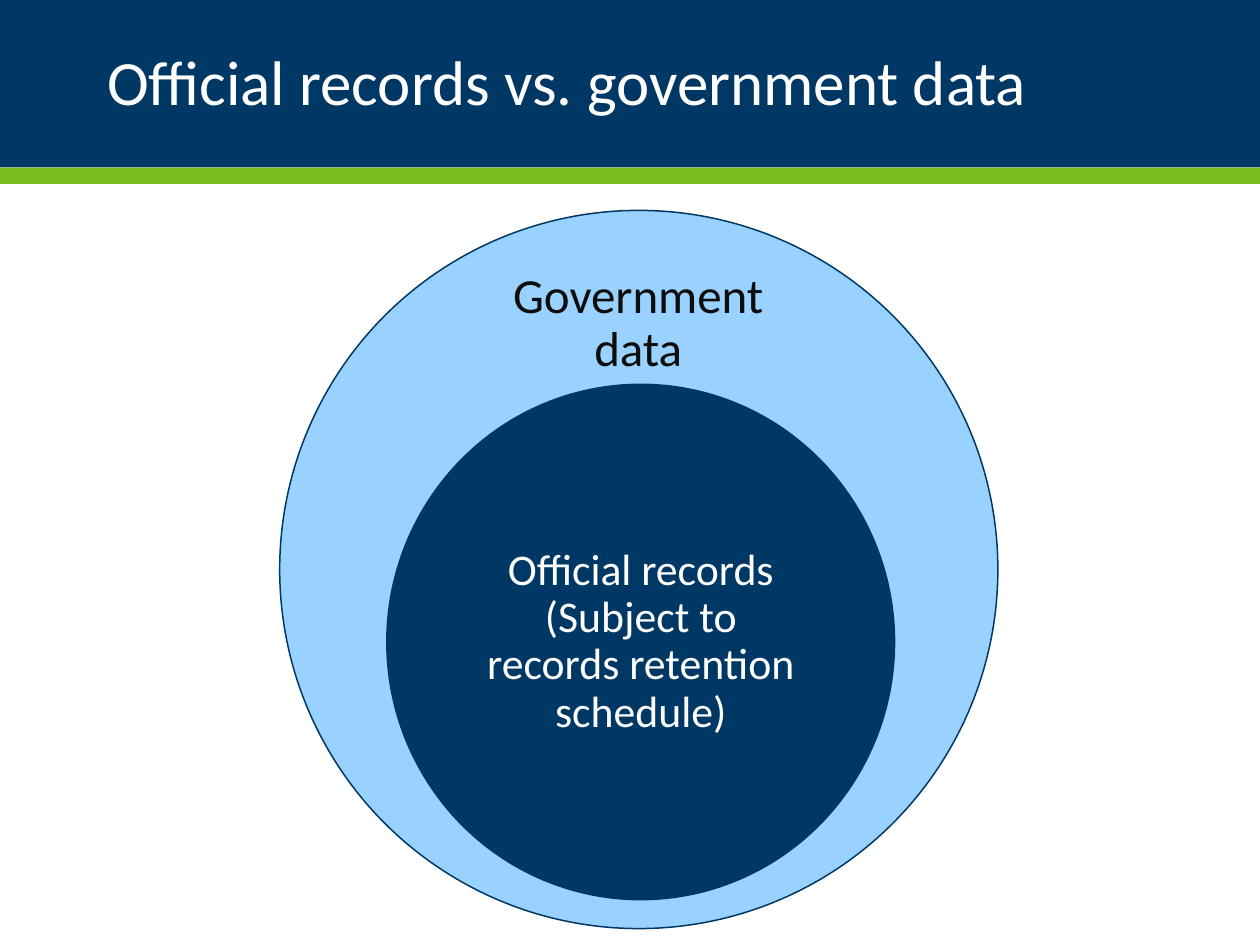
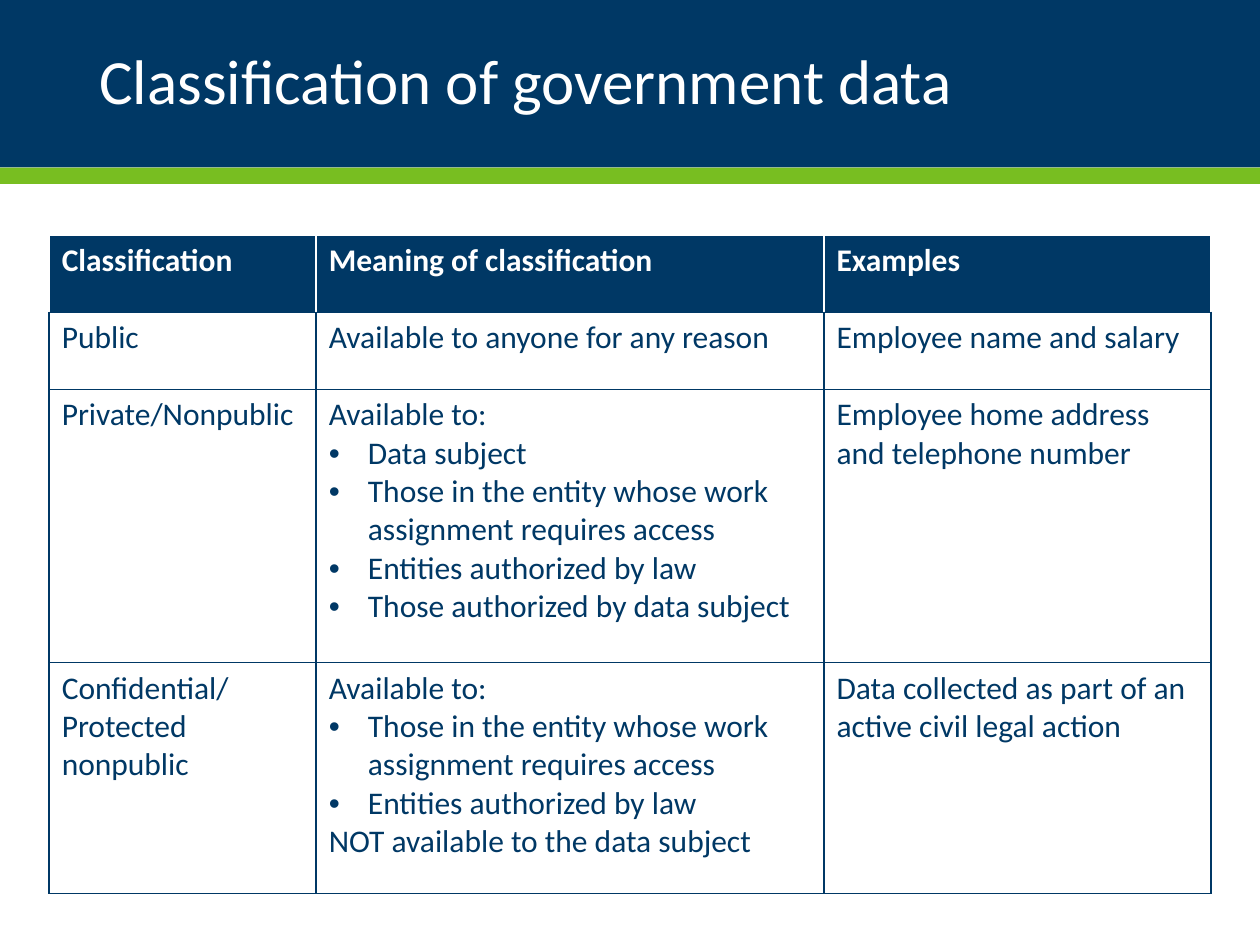
"""Build two slides on official records and the classification of government data."""
from dataclasses import dataclass
from typing import NamedTuple

from lxml.etree import SubElement
from pptx import Presentation
from pptx.dml.color import RGBColor
from pptx.enum.shapes import MSO_SHAPE
from pptx.enum.text import MSO_ANCHOR, PP_ALIGN
from pptx.oxml.ns import qn
from pptx.util import Inches, Pt

NAVY = RGBColor(0x00, 0x38, 0x65)
GREEN = RGBColor(0x78, 0xBE, 0x21)
SKY = RGBColor(0x99, 0xD1, 0xFF)
INK = RGBColor(0x0D, 0x0D, 0x0D)
WHITE = RGBColor(0xFF, 0xFF, 0xFF)
FONT = "Calibri"
SLIDE_WIDTH, SLIDE_HEIGHT = Inches(10), Inches(7.5)
GRID_COLUMNS, GRID_ROWS = 100, 75


class Region(NamedTuple):
    """Place on the slide in grid columns and rows."""
    left: float
    top: float
    width: float
    height: float


class Line(NamedTuple):
    """Paragraph of a table cell."""
    text: str
    bulleted: bool = False


@dataclass(frozen=True)
class Label:
    """Text with its place, size, colour and layout."""
    text: str
    region: Region
    size: float
    color: RGBColor
    inset: float = 0.1
    left_inset: float = 0.1
    alignment: PP_ALIGN = PP_ALIGN.LEFT


@dataclass(frozen=True)
class Circle:
    """Circle of the nested diagram with its label."""
    region: Region
    fill: RGBColor
    label: Label


BANDS = ((Region(0, 0, 100, 13.3), NAVY), (Region(0, 13.3, 100, 1.3), GREEN))
CIRCLES = (
    Circle(Region(22.2, 16.7, 57, 57), SKY,
           Label("Government data", Region(35.7, 20.9, 29.9, 9.7), 28, INK,
                 0.22, 0.22, PP_ALIGN.CENTER)),
    Circle(Region(30.7, 30.5, 40.3, 40.9), NAVY,
           Label("Official records (Subject to records retention schedule)",
                 Region(36.6, 40.7, 28.5, 20.5), 25, WHITE,
                 0.19, 0.19, PP_ALIGN.CENTER)),
)

TABLE_REGION = Region(3.9, 18.7, 92.2, 52.2)
COLUMN_WIDTHS = (21.2, 40.3, 30.7)
ROW_HEIGHTS = (6.1, 6.1, 21.7, 18.3)
AVAILABLE = Line("Available to:")
WORKERS = Line("Those in the entity whose work assignment requires access", True)
ENTITIES = Line("Entities authorized by law", True)
TABLE_ROWS = (
    ((Line("Classification"),), (Line("Meaning of classification"),), (Line("Examples"),)),
    ((Line("Public"),), (Line("Available to anyone for any reason"),),
     (Line("Employee name and salary"),)),
    ((Line("Private/Nonpublic"),),
     (AVAILABLE, Line("Data subject", True), WORKERS, ENTITIES,
      Line("Those authorized by data subject", True)),
     (Line("Employee home address and telephone number"),)),
    ((Line("Confidential/\vProtected nonpublic"),),
     (AVAILABLE, WORKERS, ENTITIES, Line("NOT available to the data subject")),
     (Line("Data collected as part of an active civil legal action"),)),
)


def across(columns: float) -> int:
    """Return the length of a number of grid columns."""
    return round(SLIDE_WIDTH * columns / GRID_COLUMNS)


def down(rows: float) -> int:
    """Return the length of a number of grid rows."""
    return round(SLIDE_HEIGHT * rows / GRID_ROWS)


def place(region: Region) -> tuple[int, int, int, int]:
    """Return a region as left, top, width and height."""
    return across(region.left), down(region.top), across(region.width), down(region.height)


def format_runs(paragraph, size: float, color: RGBColor, bold: bool = False) -> None:
    """Give every run of a paragraph the same font."""
    for run in paragraph.runs:
        run.font.name = FONT
        run.font.size = Pt(size)
        run.font.bold = bold
        run.font.color.rgb = color


def draw_shape(slide, kind: MSO_SHAPE, region: Region, fill: RGBColor, outlined: bool = False) -> None:
    """Draw a flat shape, with a navy outline if asked."""
    shape = slide.shapes.add_shape(kind, *place(region))
    shape.shadow.inherit = False
    shape.fill.solid()
    shape.fill.fore_color.rgb = fill
    if outlined:
        shape.line.color.rgb = NAVY
        shape.line.width = Pt(0.85)
    else:
        shape.line.fill.background()


def draw_label(slide, label: Label) -> None:
    """Draw a text box centred vertically in its region."""
    text_frame = slide.shapes.add_textbox(*place(label.region)).text_frame
    text_frame.word_wrap = True
    text_frame.vertical_anchor = MSO_ANCHOR.MIDDLE
    text_frame.margin_left = Inches(label.left_inset)
    text_frame.margin_right = text_frame.margin_top = text_frame.margin_bottom = Inches(label.inset)
    text_frame.text = label.text
    paragraph = text_frame.paragraphs[0]
    paragraph.alignment = label.alignment
    paragraph.line_spacing = 0.9
    format_runs(paragraph, label.size, label.color)


def add_titled_slide(presentation, title: str, region: Region, left_inset: float = 0.1):
    """Add a blank slide with the shared bands and a title."""
    slide = presentation.slides.add_slide(presentation.slide_layouts[6])
    for band, color in BANDS:
        draw_shape(slide, MSO_SHAPE.RECTANGLE, band, color)
    draw_label(slide, Label(title, region, 36, WHITE, 0.05, left_inset))
    return slide


def add_bullet(paragraph) -> None:
    """Give a paragraph a hanging bullet."""
    properties = paragraph._p.get_or_add_pPr()
    properties.set("marL", str(Inches(0.31)))
    properties.set("indent", str(-Inches(0.31)))
    SubElement(properties, qn("a:buFont"), typeface="Arial")
    SubElement(properties, qn("a:buChar"), char="•")


def set_borders(cell, side_color: RGBColor) -> None:
    """Draw the four borders of a cell, with a navy bottom."""
    properties = cell._tc.get_or_add_tcPr()
    for index, side in enumerate(("L", "R", "T", "B")):
        border = SubElement(properties, qn(f"a:ln{side}"), w=str(Pt(1)))
        fill = SubElement(border, qn("a:solidFill"))
        SubElement(fill, qn("a:srgbClr"), val=str(NAVY if side == "B" else side_color))
        properties.insert(index, border)


def fill_cell(cell, lines: tuple[Line, ...], is_header: bool) -> None:
    """Write and colour one table cell."""
    cell.fill.solid()
    cell.fill.fore_color.rgb = NAVY if is_header else WHITE
    set_borders(cell, WHITE if is_header else NAVY)
    for index, line in enumerate(lines):
        text_frame = cell.text_frame
        paragraph = text_frame.add_paragraph() if index else text_frame.paragraphs[0]
        paragraph.text = line.text
        format_runs(paragraph, 18, WHITE if is_header else NAVY, is_header)
        if line.bulleted:
            add_bullet(paragraph)


def draw_table(slide) -> None:
    """Draw the classification table."""
    table = slide.shapes.add_table(len(ROW_HEIGHTS), len(COLUMN_WIDTHS), *place(TABLE_REGION)).table
    table.horz_banding = False
    for column, width in zip(table.columns, COLUMN_WIDTHS):
        column.width = across(width)
    for row_index, (row, height) in enumerate(zip(table.rows, ROW_HEIGHTS)):
        row.height = down(height)
        for cell, lines in zip(row.cells, TABLE_ROWS[row_index]):
            fill_cell(cell, lines, row_index == 0)


def main() -> None:
    """Build and save the presentation."""
    presentation = Presentation()
    presentation.slide_width, presentation.slide_height = SLIDE_WIDTH, SLIDE_HEIGHT

    records_slide = add_titled_slide(
        presentation, "Official records vs. government data", Region(0, 0, 100, 13.5), 0.85)
    for circle in CIRCLES:
        draw_shape(records_slide, MSO_SHAPE.OVAL, circle.region, circle.fill, outlined=True)
        draw_label(records_slide, circle.label)

    classification_slide = add_titled_slide(
        presentation, "Classification of government data", Region(6.9, 1.7, 86.2, 10))
    draw_table(classification_slide)

    presentation.save("out.pptx")


if __name__ == "__main__":
    main()
